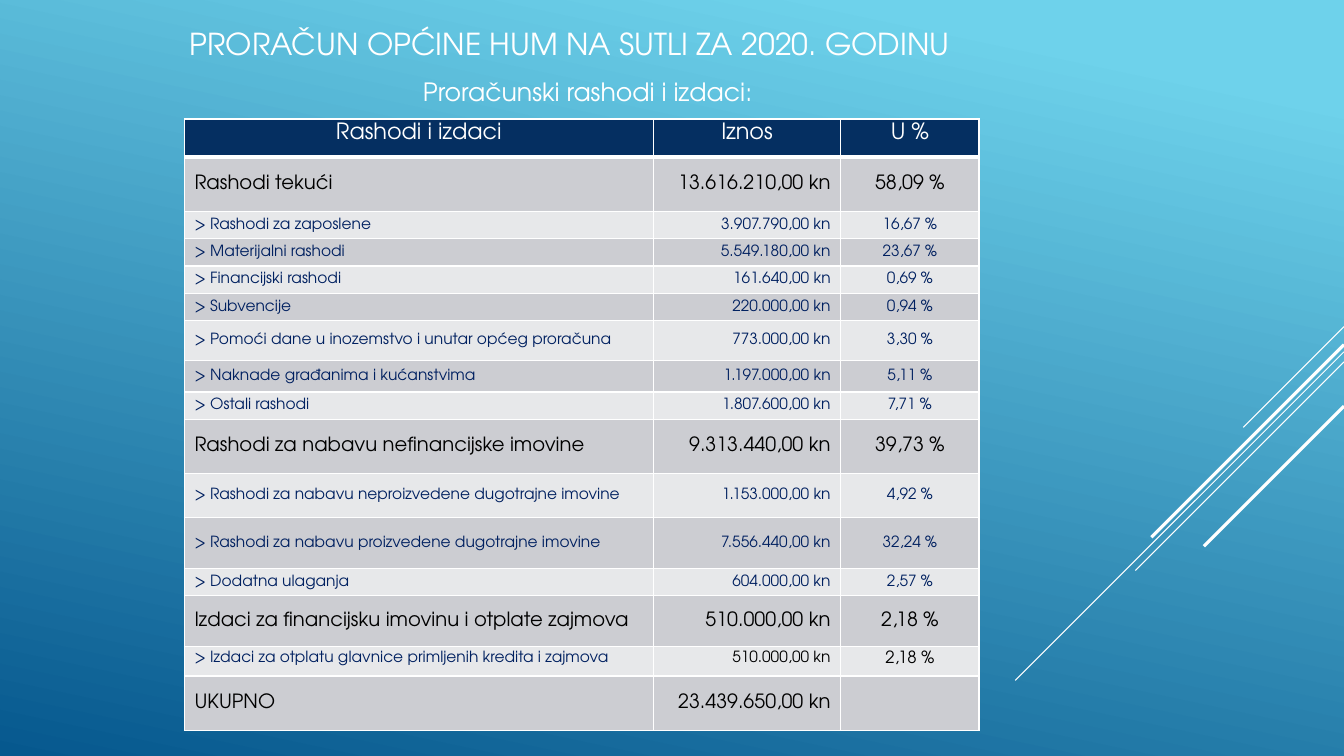
from lxml.etree import SubElement
from pptx import Presentation
from pptx.dml.color import RGBColor
from pptx.enum.shapes import MSO_CONNECTOR
from pptx.enum.text import MSO_ANCHOR, PP_ALIGN
from pptx.oxml.ns import qn
from pptx.util import Inches, Pt

FONT = "TeX Gyre Adventor"
COLORS = {
    "white": "FFFFFF", "black": "000000", "navy": "002060", "header": "052F61",
    "dark_band": "CCCDD2", "light_band": "E7E8EA", "sky": "6ED2EB", "sea": "06588E",
}
TITLE = "PRORAČUN OPĆINE HUM NA SUTLI ZA 2020. GODINU"
SUBTITLE = "Proračunski rashodi i izdaci:"
COLUMN_WIDTHS = [4.65, 1.86, 1.37]
ALIGNMENTS = [PP_ALIGN.LEFT, PP_ALIGN.RIGHT, PP_ALIGN.CENTER]
BUDGET = [
    (0.38, "Rashodi i izdaci", "Iznos", "U %"),
    (0.54, "Rashodi tekući", "13.616.210,00 kn", "58,09 %"),
    (0.27, "> Rashodi za zaposlene", "3.907.790,00 kn", "16,67 %"),
    (0.27, "> Materijalni rashodi", "5.549.180,00 kn", "23,67 %"),
    (0.27, "> Financijski rashodi", "161.640,00 kn", "0,69 %"),
    (0.27, "> Subvencije", "220.000,00 kn", "0,94 %"),
    (0.4, "> Pomoći dane u inozemstvo i unutar općeg proračuna", "773.000,00 kn", "3,30 %"),
    (0.31, "> Naknade građanima i kućanstvima", "1.197.000,00 kn", "5,11 %"),
    (0.27, "> Ostali rashodi", "1.807.600,00 kn", "7,71 %"),
    (0.54, "Rashodi za nabavu nefinancijske imovine", "9.313.440,00 kn", "39,73 %"),
    (0.44, "> Rashodi za nabavu neproizvedene dugotrajne imovine", "1.153.000,00 kn", "4,92 %"),
    (0.5, "> Rashodi za nabavu proizvedene dugotrajne imovine", "7.556.440,00 kn", "32,24 %"),
    (0.27, "> Dodatna ulaganja", "604.000,00 kn", "2,57 %"),
    (0.51, "Izdaci za financijsku imovinu i otplate zajmova", "510.000,00 kn", "2,18 %"),
    (0.29, "> Izdaci za otplatu glavnice primljenih kredita i zajmova", "510.000,00 kn", "2,18 %"),
    (0.54, "UKUPNO", "23.439.650,00 kn", ""),
]
LOAN_ROW = 14
TOP_ROWS = (0, LOAN_ROW)
TOP_MARGIN = 0.04
SLIDE_WIDTH = 13.33
DIAGONALS = [(3.24, 1.0, 0.75), (3.49, 3.26, 0.75), (3.59, 2.07, 0.75),
             (3.42, 1.91, 2.25), (4.03, 1.39, 2.25)]


def rgb(name):
    return RGBColor.from_string(COLORS[name])


def format_text(frame, size, color, alignment):
    paragraph = frame.paragraphs[0]
    paragraph.alignment = alignment
    for run in paragraph.runs:
        run.font.name = FONT
        run.font.size = Pt(size)
        run.font.color.rgb = rgb(color)


def add_heading(slide, text, box, size, alignment, anchor):
    frame = slide.shapes.add_textbox(*map(Inches, box)).text_frame
    frame.word_wrap = True
    frame.vertical_anchor = anchor
    frame.text = text
    format_text(frame, size, "white", alignment)


def add_borders(cell, row):
    properties = cell._tc.get_or_add_tcPr()
    widths = {"lnL": 1, "lnR": 1, "lnT": 3 if row == 1 else 1, "lnB": 3 if row == 0 else 1}
    for side, width in widths.items():
        border = SubElement(properties, qn(f"a:{side}"), w=str(Pt(width)))
        SubElement(SubElement(border, qn("a:solidFill")), qn("a:srgbClr"), val=COLORS["white"])


def row_style(row, label):
    if row == 0:
        return 16, "white", "header"
    band = "dark_band" if row % 2 else "light_band"
    return (11, "navy", band) if label.startswith(">") else (14, "black", band)


def add_budget(slide):
    table = slide.shapes.add_table(
        len(BUDGET), len(COLUMN_WIDTHS), Inches(1.83), Inches(1.18),
        Inches(sum(COLUMN_WIDTHS)), Inches(sum(entry[0] for entry in BUDGET))).table
    table.first_row = False
    table.horz_banding = False
    for column, width in zip(table.columns, COLUMN_WIDTHS):
        column.width = Inches(width)
    for row, (height, *values) in enumerate(BUDGET):
        table.rows[row].height = Inches(height)
        size, color, band = row_style(row, values[0])
        for column, value in enumerate(values):
            cell = table.cell(row, column)
            add_borders(cell, row)
            cell.fill.solid()
            cell.fill.fore_color.rgb = rgb(band)
            cell.margin_top = Inches(TOP_MARGIN if row in TOP_ROWS else 0)
            cell.margin_bottom = 0
            cell.vertical_anchor = MSO_ANCHOR.TOP if row in TOP_ROWS else MSO_ANCHOR.MIDDLE
            cell.text_frame.text = value
            loan_figure = row == LOAN_ROW and column > 0
            format_text(cell.text_frame,
                        12 if loan_figure and column == 2 else size,
                        "black" if loan_figure else color,
                        ALIGNMENTS[column] if row else PP_ALIGN.CENTER)


def add_diagonals(slide):
    for top, reach, weight in DIAGONALS:
        diagonal = slide.shapes.add_connector(
            MSO_CONNECTOR.STRAIGHT, Inches(SLIDE_WIDTH), Inches(top),
            Inches(SLIDE_WIDTH - reach), Inches(top + reach))
        diagonal.line.color.rgb = rgb("white")
        diagonal.line.width = Pt(weight)
        SubElement(diagonal._element.spPr, qn("a:effectLst"))


def main():
    presentation = Presentation()
    presentation.slide_width = Inches(SLIDE_WIDTH)
    presentation.slide_height = Inches(7.5)
    slide = presentation.slides.add_slide(presentation.slide_layouts[6])

    backdrop = slide.background.fill
    backdrop.gradient()
    backdrop.gradient_angle = 258
    for stop, color, position in zip(backdrop.gradient_stops, ("sky", "sea"), (0.1, 1.0)):
        stop.color.rgb = rgb(color)
        stop.position = position

    add_diagonals(slide)
    add_heading(slide, TITLE, (1.01, 0.17, 9.28, 0.53), 21.6, PP_ALIGN.CENTER, MSO_ANCHOR.MIDDLE)
    add_heading(slide, SUBTITLE, (2.47, 0.48, 5.09, 0.63), 18, PP_ALIGN.RIGHT, MSO_ANCHOR.BOTTOM)
    add_budget(slide)
    presentation.save("out.pptx")


if __name__ == "__main__":
    main()
